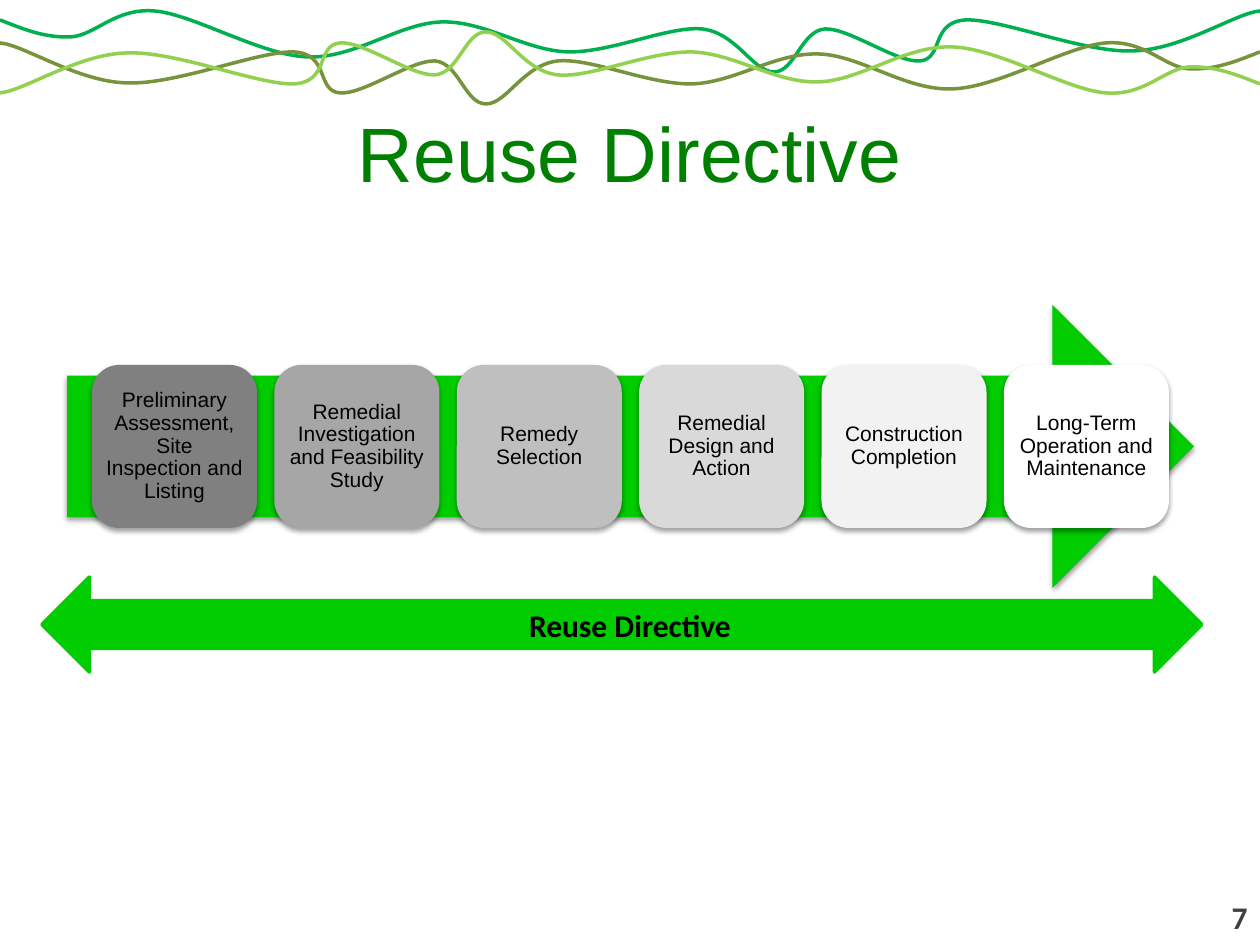
from lxml import etree
from pptx import Presentation
from pptx.dml.color import RGBColor
from pptx.enum.shapes import MSO_SHAPE
from pptx.enum.text import MSO_ANCHOR, PP_ALIGN
from pptx.oxml import parse_xml
from pptx.oxml.ns import nsdecls, qn
from pptx.util import Pt

EMU_PER_PX = 914400 / 126
SLIDE_WIDTH, SLIDE_HEIGHT = 1260, 945

BLACK = RGBColor(0x00, 0x00, 0x00)
TITLE_GREEN = RGBColor(0x00, 0x80, 0x00)
ARROW_GREEN = RGBColor(0x00, 0xCC, 0x00)
NUMBER_GRAY = RGBColor(0x40, 0x40, 0x40)
WAVE_GREEN = RGBColor(0x00, 0xB0, 0x50)
WAVE_OLIVE = RGBColor(0x77, 0x93, 0x3C)
WAVE_LIME = RGBColor(0x92, 0xD0, 0x50)

STEPS = [
    ("Preliminary Assessment, Site Inspection and Listing", RGBColor(0x80, 0x80, 0x80)),
    ("Remedial Investigation and Feasibility Study", RGBColor(0xA6, 0xA6, 0xA6)),
    ("Remedy Selection", RGBColor(0xBF, 0xBF, 0xBF)),
    ("Remedial Design and Action", RGBColor(0xD9, 0xD9, 0xD9)),
    ("Construction Completion", RGBColor(0xF2, 0xF2, 0xF2)),
    ("Long-Term Operation and Maintenance", RGBColor(0xFF, 0xFF, 0xFF)),
]
CARD_LEFT, CARD_TOP, CARD_WIDTH, CARD_HEIGHT = 92, 365, 165, 163
LAST_CARD_LEFT = 1004

# Start point, then two control points and an end point for each curve
WAVE = [
    (0, 20),
    (23, 29), (44, 38), (71, 37),
    (96, 35), (115, 8), (154, 11),
    (193, 14), (260, 55), (307, 57),
    (355, 59), (399, 23), (442, 22),
    (485, 21), (524, 50), (567, 52),
    (611, 53), (668, 26), (702, 29),
    (737, 33), (753, 72), (774, 72),
    (795, 72), (801, 31), (825, 29),
    (849, 28), (897, 63), (920, 61),
    (944, 59), (930, 22), (966, 20),
    (1002, 19), (1084, 53), (1133, 51),
    (1182, 50), (1236, 13), (1260, 11),
]
WAVES = [
    (WAVE, WAVE_GREEN),
    ([(SLIDE_WIDTH - x, y + 32) for x, y in WAVE], WAVE_OLIVE),
    ([(SLIDE_WIDTH - x, 104 - y) for x, y in WAVE], WAVE_LIME),
]


def px(length):
    return round(length * EMU_PER_PX)


def add_wave(slide, points, color):
    """Draw the points as a chain of cubic curves."""
    builder = slide.shapes.build_freeform(*points[0], scale=EMU_PER_PX)
    builder.add_line_segments(points[1:], close=False)
    shape = builder.convert_to_shape()
    shape.shadow.inherit = False
    shape.fill.background()
    shape.line.color.rgb = color
    shape.line.width = Pt(2)

    lines = list(shape.element.iter(qn("a:lnTo")))
    path = lines[0].getparent()
    for start in range(0, len(lines), 3):
        curve = etree.SubElement(path, qn("a:cubicBezTo"))
        for line in lines[start:start + 3]:
            curve.append(line[0])
            path.remove(line)


def add_filled_shape(slide, kind, box, color):
    shape = slide.shapes.add_shape(kind, *map(px, box))
    shape.shadow.inherit = False
    shape.fill.solid()
    shape.fill.fore_color.rgb = color
    shape.line.fill.background()
    return shape


def add_soft_shadow(shape):
    effects = shape.element.spPr.find(qn("a:effectLst"))
    effects.append(parse_xml(
        f'<a:outerShdw {nsdecls("a")} blurRad="40000" dist="20000" dir="5400000" rotWithShape="0">'
        '<a:srgbClr val="000000"><a:alpha val="38000"/></a:srgbClr></a:outerShdw>'
    ))


def write_text(shape, text, size, font_name, color, bold=False,
               alignment=PP_ALIGN.CENTER, anchor=MSO_ANCHOR.MIDDLE):
    frame = shape.text_frame
    frame.word_wrap = True
    frame.vertical_anchor = anchor
    frame.text = text
    paragraph = frame.paragraphs[0]
    paragraph.alignment = alignment
    font = paragraph.runs[0].font
    font.size = Pt(size)
    font.name = font_name
    font.bold = bold
    font.color.rgb = color
    return paragraph


def add_text_box(slide, box, *args, **kwargs):
    return write_text(slide.shapes.add_textbox(*map(px, box)), *args, **kwargs)


def add_card(slide, left, text, color):
    card = add_filled_shape(slide, MSO_SHAPE.ROUNDED_RECTANGLE,
                            (left, CARD_TOP, CARD_WIDTH, CARD_HEIGHT), color)
    add_soft_shadow(card)
    write_text(card, text, 12, "Arial", BLACK).line_spacing = 0.9
    frame = card.text_frame
    frame.margin_left = frame.margin_right = px(6)
    frame.margin_top = frame.margin_bottom = px(6)


def main():
    presentation = Presentation()
    presentation.slide_width = px(SLIDE_WIDTH)
    presentation.slide_height = px(SLIDE_HEIGHT)
    slide = presentation.slides.add_slide(presentation.slide_layouts[6])

    for points, color in WAVES:
        add_wave(slide, points, color)

    add_text_box(slide, (966, 892, 294, 40), "7", 18, "Calibri", NUMBER_GRAY, bold=True,
                 alignment=PP_ALIGN.RIGHT, anchor=MSO_ANCHOR.TOP)
    add_text_box(slide, (63, 73, 1134, 158), "Reuse Directive", 44, "Arial", TITLE_GREEN)

    span_arrow = add_filled_shape(slide, MSO_SHAPE.LEFT_RIGHT_ARROW,
                                  (42, 577, 1160, 95), ARROW_GREEN)
    span_arrow.line.color.rgb = ARROW_GREEN
    span_arrow.line.width = Pt(2)
    add_text_box(slide, (441, 600, 378, 50), "Reuse Directive", 18, "Calibri", BLACK,
                 bold=True, anchor=MSO_ANCHOR.TOP)

    process_arrow = add_filled_shape(slide, MSO_SHAPE.RIGHT_ARROW,
                                     (67, 305, 1127, 283), ARROW_GREEN)
    add_soft_shadow(process_arrow)

    card_step = (LAST_CARD_LEFT - CARD_LEFT) / (len(STEPS) - 1)
    for index, (text, color) in enumerate(STEPS):
        add_card(slide, CARD_LEFT + index * card_step, text, color)

    presentation.save("out.pptx")


if __name__ == "__main__":
    main()
